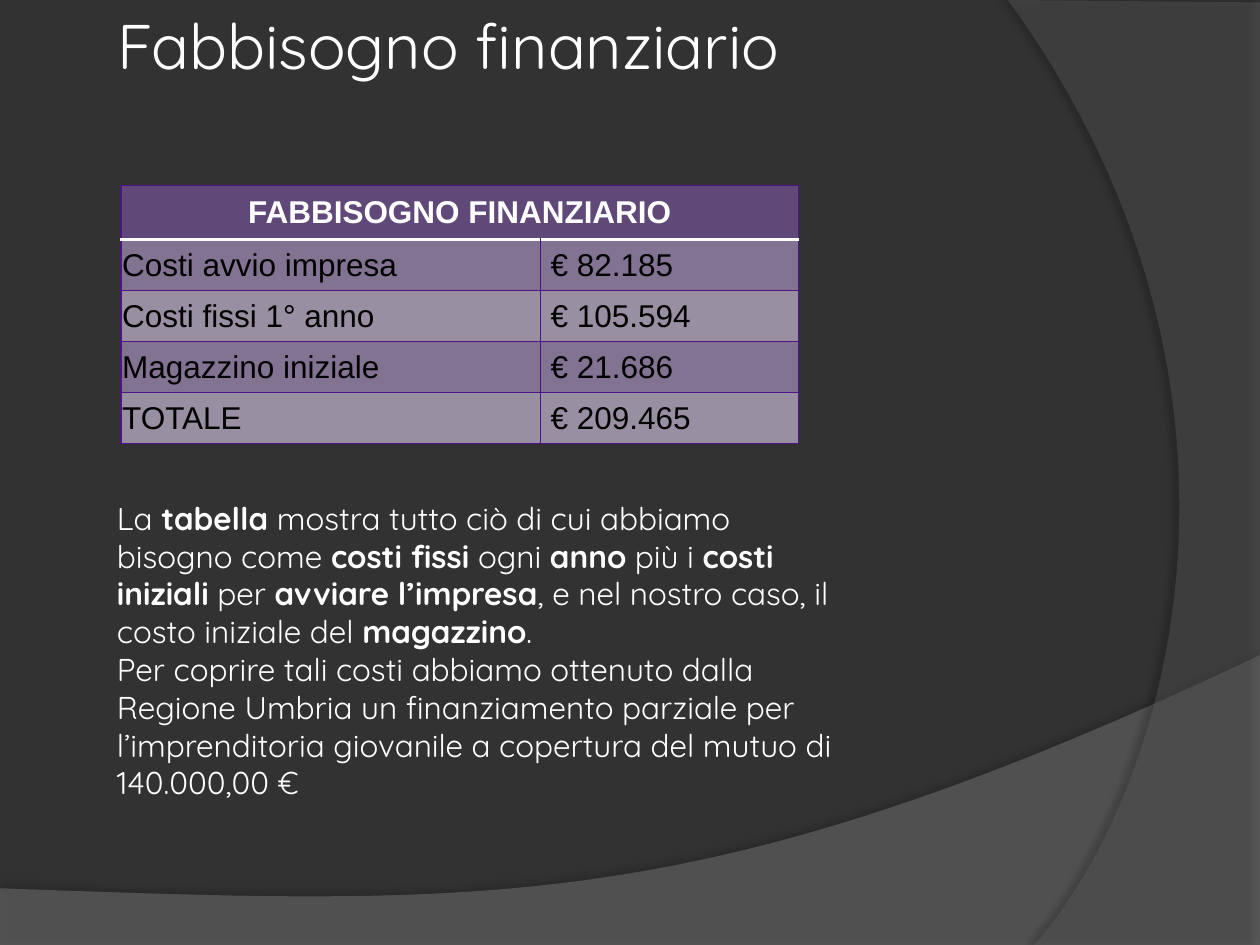
"""Builds the slide on financial needs: a cost table and its explanation."""
from dataclasses import dataclass

from lxml.etree import SubElement
from pptx import Presentation
from pptx.dml.color import RGBColor
from pptx.enum.text import MSO_ANCHOR, MSO_AUTO_SIZE, PP_ALIGN
from pptx.oxml.ns import qn
from pptx.slide import Slide
from pptx.util import Emu, Inches, Pt

CHARCOAL = RGBColor(0x32, 0x32, 0x32)
WAVE_GREY = RGBColor(0x7F, 0x7F, 0x7F)
ARC_GREY = RGBColor(0x5E, 0x5E, 0x5E)
WHITE = RGBColor(0xFF, 0xFF, 0xFF)
BLACK = RGBColor(0x00, 0x00, 0x00)
PURPLE = RGBColor(0x60, 0x48, 0x78)
BAND_DARK = RGBColor(0x83, 0x73, 0x93)
BAND_LIGHT = RGBColor(0x99, 0x8F, 0xA2)
BORDER = RGBColor(0x4D, 0x13, 0x87)

HEADING = "FABBISOGNO FINANZIARIO"
COSTS = [
    ("Costi avvio impresa", "€ 82.185"),
    ("Costi fissi 1° anno", "€ 105.594"),
    ("Magazzino iniziale", "€ 21.686"),
    ("TOTALE", "€ 209.465"),
]
EXPLANATION = [
    "La *tabella* mostra tutto ciò di cui abbiamo bisogno come *costi fissi *ogni *anno* più i "
    "*costi iniziali* per *avviare l’impresa*, e nel nostro caso, il costo iniziale del *magazzino*.",
    "Per coprire tali costi abbiamo ottenuto dalla Regione Umbria un finanziamento parziale per "
    "l’imprenditoria giovanile a copertura del mutuo di 140.000,00 €",
]


def bezier(start, first, second, end, steps=48):
    """Return the points of a cubic curve after its start."""
    points = []
    for step in range(1, steps + 1):
        t = step / steps
        weights = ((1 - t) ** 3, 3 * t * (1 - t) ** 2, 3 * t * t * (1 - t), t ** 3)
        points.append(tuple(
            sum(w * value for w, value in zip(weights, axis))
            for axis in zip(start, first, second, end)
        ))
    return points


@dataclass
class Composer:
    """Holds the style and the current slide, on a grid of 100 columns by 75 rows."""

    slide: Slide
    unit: int = Inches(0.1)
    text_font: str = "Quicksand"
    table_font: str = "Arial"
    body_size: int = 18
    title_size: int = 36

    def grid(self, *lengths):
        """Turn grid lengths into slide lengths."""
        return [Emu(round(length * self.unit)) for length in lengths]

    def add_runs(self, paragraph, text, font, size, color, bold=False):
        """Add text run by run, with asterisks switching the weight."""
        for index, part in enumerate(text.split("*")):
            run = paragraph.add_run()
            run.text = part
            run.font.name = font
            run.font.size = Pt(size)
            run.font.color.rgb = color
            run.font.bold = bold != bool(index % 2)

    def title(self, text, left, top, width, height):
        """Fill the title placeholder and bring it to the front."""
        title = self.slide.shapes.title
        title.left, title.top, title.width, title.height = self.grid(left, top, width, height)
        frame = title.text_frame
        frame.vertical_anchor = MSO_ANCHOR.TOP
        frame.auto_size = MSO_AUTO_SIZE.NONE
        paragraph = frame.paragraphs[0]
        paragraph.alignment = PP_ALIGN.LEFT
        self.add_runs(paragraph, text, self.text_font, self.title_size, WHITE)
        self.slide.shapes._spTree.append(title._element)

    def panel(self, points, color, opacity, shade, distance, direction):
        """Draw a translucent outline with a soft shadow."""
        start, *others = [self.grid(*point) for point in points]
        builder = self.slide.shapes.build_freeform(*start, scale=1.0)
        builder.add_line_segments(others, close=True)
        panel = builder.convert_to_shape()
        panel.line.fill.background()
        panel.fill.solid()
        panel.fill.fore_color.rgb = color
        panel.shadow.inherit = False
        properties = panel._element.spPr
        fill_color = properties.find(qn("a:solidFill")).find(qn("a:srgbClr"))
        SubElement(fill_color, qn("a:alpha"), val=str(opacity * 1000))
        shadow = SubElement(
            properties.find(qn("a:effectLst")), qn("a:outerShdw"),
            blurRad=str(Pt(4)), dist=str(Pt(distance)), dir=str(direction * 60000),
            algn="ctr", rotWithShape="0",
        )
        shadow_color = SubElement(shadow, qn("a:srgbClr"), val=str(BLACK))
        SubElement(shadow_color, qn("a:alpha"), val=str(shade * 1000))

    def border(self, cell, side, color, points):
        """Draw one side of a cell."""
        line = SubElement(cell._tc.get_or_add_tcPr(), qn(f"a:ln{side}"), w=str(Pt(points)))
        SubElement(SubElement(line, qn("a:solidFill")), qn("a:srgbClr"), val=str(color))

    def cell(self, cell, text, fill, color, row, indent=0.01, bold=False):
        """Format and fill one table cell."""
        for side in "LRTB":
            divider = (row, side) in ((0, "B"), (1, "T"))
            self.border(cell, side, WHITE if divider else BORDER, 1.5 if divider else 0.75)
        cell.fill.solid()
        cell.fill.fore_color.rgb = fill
        cell.vertical_anchor = MSO_ANCHOR.MIDDLE
        cell.margin_left = Inches(indent)
        cell.margin_right = cell.margin_top = Inches(0.01)
        cell.margin_bottom = 0
        if text:
            self.add_runs(cell.text_frame.paragraphs[0], text, self.table_font,
                          self.body_size, color, bold)

    def table(self, heading, rows, left, top, columns, heading_height, row_height):
        """Add a table with a merged heading and banded rows."""
        height = heading_height + row_height * len(rows)
        table = self.slide.shapes.add_table(
            len(rows) + 1, len(columns), *self.grid(left, top, sum(columns), height)
        ).table
        table.first_row = table.horz_banding = False
        for column, width in zip(table.columns, self.grid(*columns)):
            column.width = width
        heights = [heading_height] + [row_height] * len(rows)
        for row, length in zip(table.rows, self.grid(*heights)):
            row.height = length
        for index in range(len(columns)):
            self.cell(table.cell(0, index), "" if index else heading, PURPLE, WHITE, 0, bold=True)
        table.cell(0, 0).merge(table.cell(0, len(columns) - 1))
        table.cell(0, 0).text_frame.paragraphs[0].alignment = PP_ALIGN.CENTER
        for number, (label, amount) in enumerate(rows, start=1):
            band = BAND_DARK if number % 2 else BAND_LIGHT
            self.cell(table.cell(number, 0), label, band, BLACK, number)
            self.cell(table.cell(number, 1), amount, band, BLACK, number, indent=0.08)

    def text(self, paragraphs, left, top, width, height):
        """Add a wrapped text box."""
        frame = self.slide.shapes.add_textbox(*self.grid(left, top, width, height)).text_frame
        frame.word_wrap = True
        for index, content in enumerate(paragraphs):
            paragraph = frame.add_paragraph() if index else frame.paragraphs[0]
            self.add_runs(paragraph, content, self.text_font, self.body_size, WHITE)


def main():
    """Compose and save the slide."""
    presentation = Presentation()
    presentation.slide_width, presentation.slide_height = Inches(10), Inches(7.5)
    slide = presentation.slides.add_slide(presentation.slide_layouts[5])
    slide.background.fill.solid()
    slide.background.fill.fore_color.rgb = CHARCOAL

    composer = Composer(slide)
    wave = bezier((100, 52), (55.9, 72.9), (39.1, 71.9), (0, 70.5))
    composer.panel([(0, 75.1), (100, 75.1), (100, 52), *wave], WAVE_GREY, 45, 35, 3.5, 270)
    arc = bezier((82.1, 75), (93.5, 61.9), (101.8, 30), (80, 0))
    composer.panel([(100, 0.2), (100, 75), (82.1, 75), *arc], ARC_GREY, 40, 45, 4, 180)
    composer.title("Fabbisogno finanziario", 8.3, 0, 77.2, 10.1)
    composer.table(HEADING, COSTS, 9.6, 14.7, (33.3, 20.5), 4.3, 4.05)
    composer.text(EXPLANATION, 8.3, 39.1, 59.8, 25.2)
    presentation.save("out.pptx")


if __name__ == "__main__":
    main()
